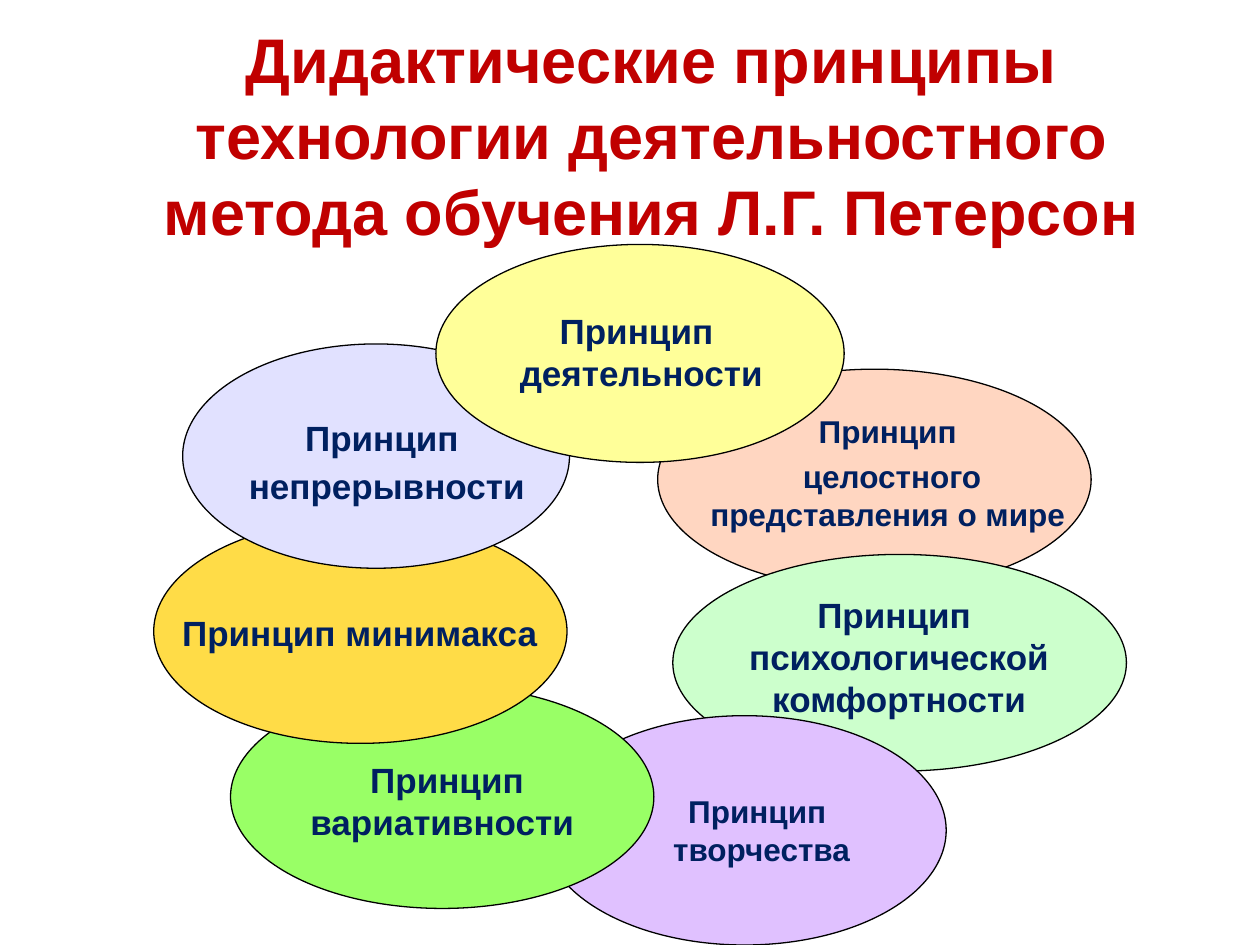
from pptx import Presentation
from pptx.dml.color import RGBColor
from pptx.enum.shapes import MSO_SHAPE as Shape
from pptx.enum.text import MSO_ANCHOR as Anchor, PP_ALIGN as Align
from pptx.util import Inches, Pt

COLORS = {
    "title": "C00000",
    "label": "002060",
    "outline": "000000",
    "peach": "FFD6C1",
    "mint": "CCFFCC",
    "lilac": "E0C1FF",
    "green": "99FF66",
    "gold": "FFDC47",
    "lavender": "E1E1FF",
    "yellow": "FFFF99",
}

PRINCIPLES = [
    ("peach", (5.22, 2.93, 3.44, 1.75), (5.27, 3.22, 3.55, 1.75), 18, 4,
     ["Принцип", " целостного представления о мире"]),
    ("mint", (5.34, 4.4, 3.6, 1.72), (5.61, 4.66, 3.05, 1.61), 20, 0,
     ["Принцип ", "психологической комфортности"]),
    ("lilac", (4.31, 5.68, 3.2, 1.82), (4.81, 6.24, 2.47, 0.99), 18, 0,
     ["Принцип ", "творчества"]),
    ("green", (1.83, 5.44, 3.36, 1.77), (1.83, 5.97, 3.36, 1.24), 20, 0,
     [" Принцип вариативности"]),
    ("gold", (1.22, 4.12, 3.28, 1.78), (1.32, 4.8, 3.07, 1.15), 20, 0,
     ["Принцип минимакса"]),
    ("lavender", (1.45, 2.73, 3.07, 1.78), (1.53, 3.26, 3.08, 1.09), 20, 3,
     ["Принцип ", "непрерывности"]),
    ("yellow", (3.46, 1.94, 3.24, 1.73), (3.9, 2.41, 2.38, 1.36), 20, 0,
     ["Принцип ", "деятельности"]),
]


class SlideBuilder:
    font_name = "Arial"
    line_width = Pt(0.75)

    def __init__(self, slide):
        self.slide = slide

    def color(self, name):
        return RGBColor.from_string(COLORS[name])

    def ellipse(self, box, fill):
        shape = self.slide.shapes.add_shape(Shape.OVAL, *map(Inches, box))
        shape.shadow.inherit = False
        shape.fill.solid()
        shape.fill.fore_color.rgb = self.color(fill)
        shape.line.color.rgb = self.color("outline")
        shape.line.width = self.line_width

    def text(self, box, lines, size, color, anchor=Anchor.TOP, gap=0):
        text_frame = self.slide.shapes.add_textbox(*map(Inches, box)).text_frame
        text_frame.word_wrap = True
        text_frame.vertical_anchor = anchor
        text_frame.text = "\n".join(lines)
        for index, paragraph in enumerate(text_frame.paragraphs):
            paragraph.alignment = Align.CENTER
            paragraph.space_before = Pt(gap if index else 0)
            for run in paragraph.runs:
                run.font.name = self.font_name
                run.font.size = Pt(size)
                run.font.bold = True
                run.font.color.rgb = self.color(color)


def main():
    presentation = Presentation()
    presentation.slide_width = Inches(10)
    presentation.slide_height = Inches(7.5)
    builder = SlideBuilder(presentation.slides.add_slide(presentation.slide_layouts[6]))

    title = "Дидактические принципы технологии деятельностного метода обучения Л.Г. Петерсон"
    builder.text((0.67, 0.44, 9, 1.25), [title], 36, "title", Anchor.MIDDLE)
    for fill, oval_box, label_box, size, gap, lines in PRINCIPLES:
        builder.ellipse(oval_box, fill)
        builder.text(label_box, lines, size, "label", gap=gap)

    presentation.save("out.pptx")


if __name__ == "__main__":
    main()
